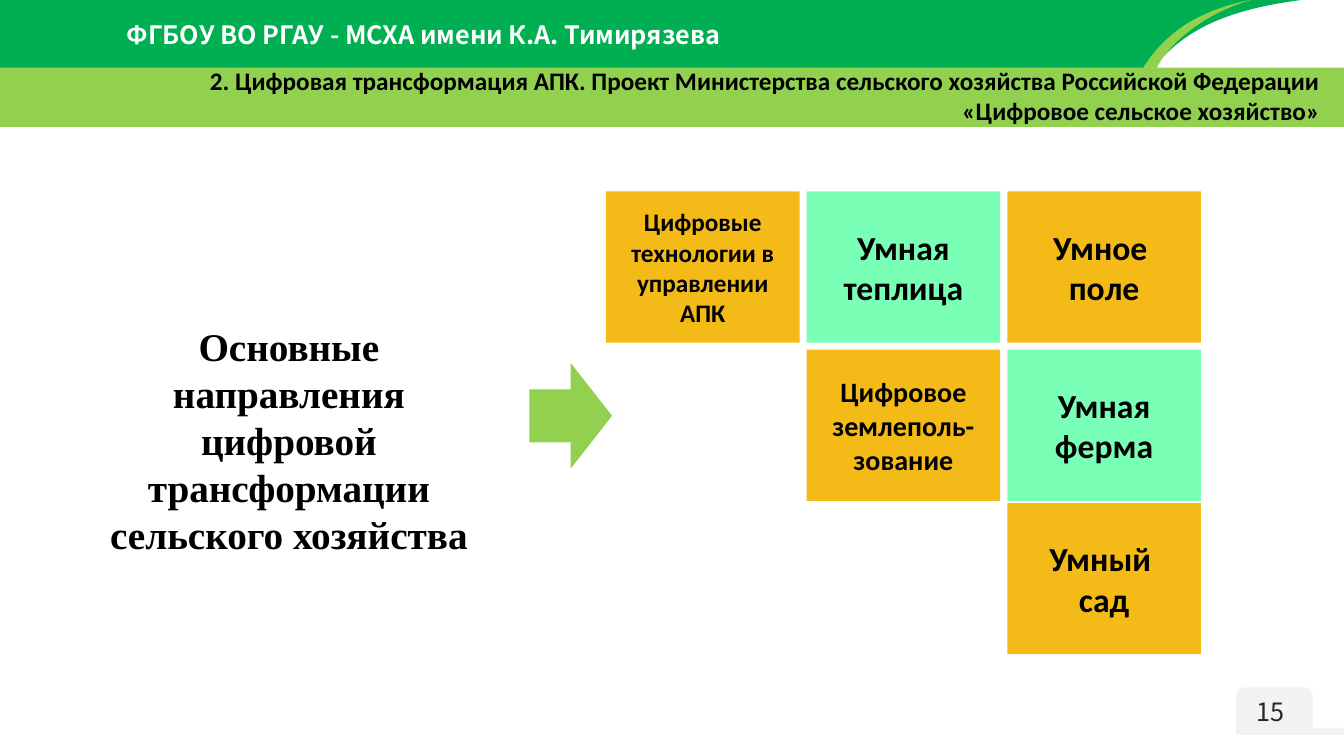
from pptx import Presentation
from pptx.dml.color import RGBColor
from pptx.enum.shapes import MSO_SHAPE
from pptx.enum.text import MSO_ANCHOR, MSO_AUTO_SIZE, PP_ALIGN
from pptx.util import Inches, Pt

RECTANGLE = MSO_SHAPE.RECTANGLE
ROUNDED = MSO_SHAPE.ROUNDED_RECTANGLE
RIGHT_ARROW = MSO_SHAPE.RIGHT_ARROW
MIDDLE = MSO_ANCHOR.MIDDLE
GROW = MSO_AUTO_SIZE.SHAPE_TO_FIT_TEXT
CENTER, RIGHT = PP_ALIGN.CENTER, PP_ALIGN.RIGHT

GREEN, LIME, GRAY = "00AF52", "92D050", "F2F2F2"
AMBER, MINT = "F4BA18", "79FFB6"
BLACK, WHITE, DARK = "000000", "FFFFFF", "262626"
SANS, BODY, SERIF = "Noto Sans CJK SC", "Calibri", "Times New Roman"


def color(value):
    return RGBColor.from_string(value)


def curve(start, control_1, control_2, end, steps=40):
    """Points of a cubic curve, after its start."""
    points = []
    for step in range(1, steps + 1):
        t = step / steps
        weights = ((1 - t) ** 3, 3 * t * (1 - t) ** 2, 3 * t ** 2 * (1 - t), t ** 3)
        corners = (start, control_1, control_2, end)
        points.append(tuple(sum(w * corner[axis] for w, corner in zip(weights, corners))
                            for axis in (0, 1)))
    return points


class SlideBuilder:
    def __init__(self, slide):
        self.slide = slide

    def paint(self, shape, fill):
        shape.shadow.inherit = False
        shape.fill.solid()
        shape.fill.fore_color.rgb = color(fill)
        shape.line.fill.background()
        return shape

    def shape(self, kind, left, top, width, height, fill):
        shape = self.slide.shapes.add_shape(
            kind, Inches(left), Inches(top), Inches(width), Inches(height))
        return self.paint(shape, fill)

    def outline(self, points, fill):
        points = [(Inches(x), Inches(y)) for x, y in points]
        builder = self.slide.shapes.build_freeform(*points[0])
        builder.add_line_segments(points[1:], close=True)
        return self.paint(builder.convert_to_shape(), fill)

    def style_text(self, text_frame, text, size, font, ink=BLACK, bold=True, align=CENTER):
        text_frame.word_wrap = True
        text_frame.text = text
        for paragraph in text_frame.paragraphs:
            paragraph.alignment = align
            for run in paragraph.runs:
                run.font.name = font
                run.font.size = Pt(size)
                run.font.bold = bold
                run.font.color.rgb = color(ink)

    def text(self, left, top, width, height, text, size, font, **style):
        box = self.slide.shapes.add_textbox(
            Inches(left), Inches(top), Inches(width), Inches(height))
        self.style_text(box.text_frame, text, size, font, **style)
        box.text_frame.auto_size = GROW

    def tile(self, left, top, fill, text, size):
        tile = self.shape(RECTANGLE, left, top, 1.92, 1.5, fill)
        tile.text_frame.vertical_anchor = MIDDLE
        self.style_text(tile.text_frame, text, size, BODY)


def main():
    presentation = Presentation()
    presentation.slide_width = Inches(13.33)
    presentation.slide_height = Inches(7.5)
    builder = SlideBuilder(presentation.slides.add_slide(presentation.slide_layouts[6]))

    # Page number
    builder.shape(ROUNDED, 12.26, 6.82, 0.76, 0.47, GRAY)
    builder.shape(RECTANGLE, 12.26, 7.22, 1.08, 0.07, GRAY)
    builder.text(12.26, 6.86, 0.73, 0.4, "15 ", 18, SANS, ink=DARK, bold=False)

    # Header with its swoosh
    tip = (12.99, -0.01)
    builder.outline([(0, 0), tip, *curve(tip, (12.02, 0.1), (11.67, 0.38), (11.4, 0.72)),
                     (0, 0.72)], GREEN)
    foot, peak = (11.31, 0.72), (12.45, -0.01)
    builder.outline([foot, *curve(foot, (11.58, 0.26), (11.98, 0.08), peak),
                     *curve(peak, (11.96, 0.11), (11.55, 0.46), (11.46, 0.71))], LIME)
    builder.text(0.22, 0.14, 7.96, 0.4, "ФГБОУ ВО РГАУ - МСХА имени К.А. Тимирязева",
                 18, SANS, ink=WHITE)

    # Title band
    builder.shape(RECTANGLE, 0, 0.67, 13.33, 0.59, LIME)
    builder.text(0.76, 0.6, 12.43, 0.71,
                 "2. Цифровая трансформация АПК. Проект Министерства сельского хозяйства "
                 "Российской Федерации «Цифровое сельское хозяйство»",
                 18, BODY, align=RIGHT)

    # Topic and arrow
    builder.text(0.76, 3.15, 4.21, 2.46,
                 "Основные направления цифровой трансформации сельского хозяйства", 28, SERIF)
    builder.shape(RIGHT_ARROW, 5.25, 3.6, 0.82, 1.05, LIME)

    # Staircase of directions: column, row, fill, text, size
    column_lefts = (6.01, 8.0, 9.99)
    row_tops = (1.9, 3.47, 4.99)
    directions = (
        (0, 0, AMBER, "Цифровые технологии в управлении АПК", 18),
        (1, 0, MINT, "Умная теплица", 24),
        (2, 0, AMBER, "Умное \nполе", 24),
        (1, 1, AMBER, "Цифровое землеполь-зование", 20),
        (2, 1, MINT, "Умная ферма", 24),
        (2, 2, AMBER, "Умный \nсад", 24),
    )
    for column, row, fill, text, size in directions:
        builder.tile(column_lefts[column], row_tops[row], fill, text, size)

    presentation.save("out.pptx")


if __name__ == "__main__":
    main()
